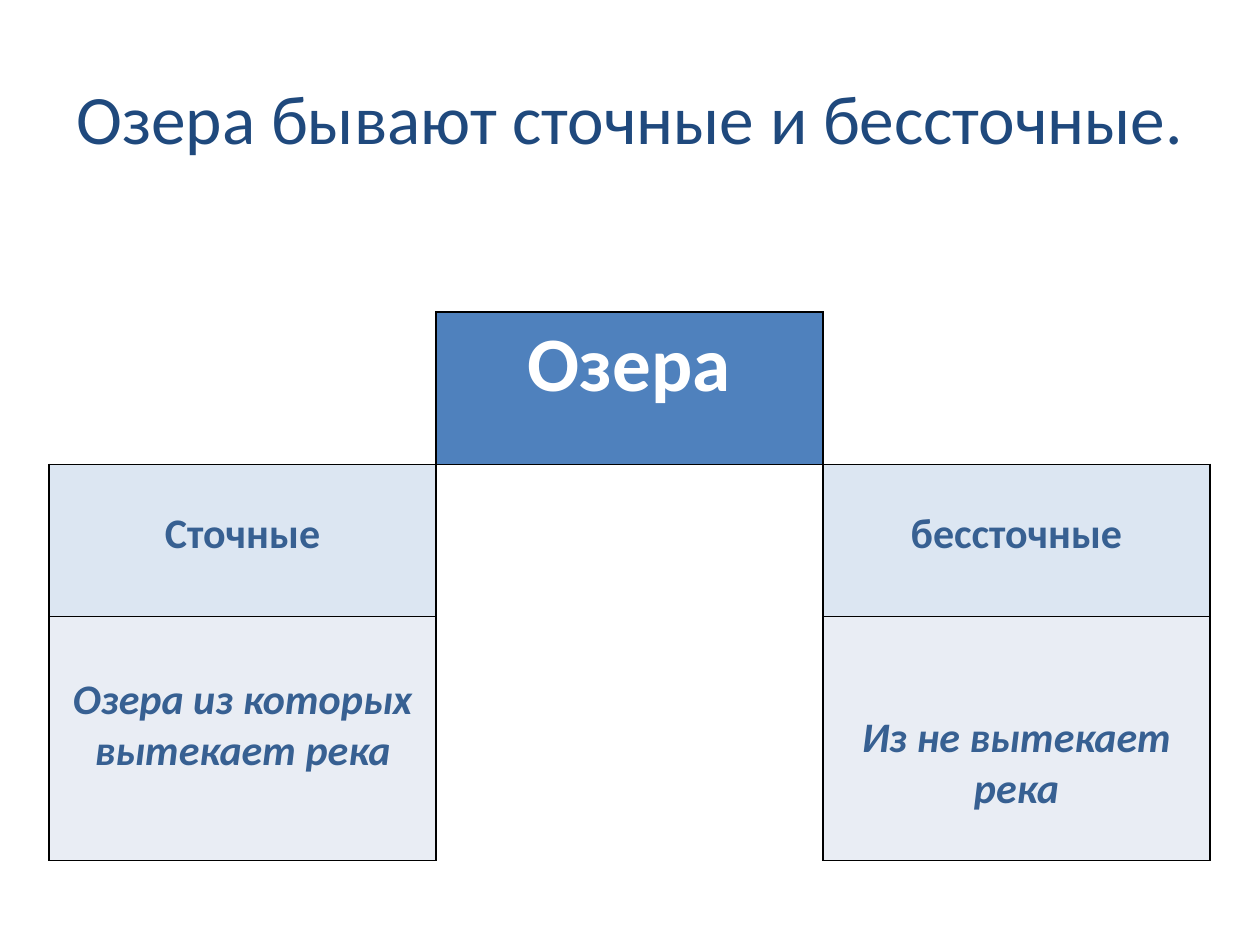
import pptx
import pptx.dml.color
import pptx.enum.text
import pptx.oxml
import pptx.oxml.ns
import pptx.util
from pptx.util import Cm

HEADING = dict(size=44, color="FFFFFF", bold=True)
KIND = dict(size=24, color="376092", bold=True)
MEANING = dict(KIND, italic=True)

# (row, column): text, fill, top margin in cm, text format
CELLS = {
    (0, 1): ("Озера", "4F81BD", 0.13, HEADING),
    (1, 0): ("Сточные", "DCE6F2", 0.9, KIND),
    (1, 2): ("бессточные", "DCE6F2", 0.9, KIND),
    (2, 0): ("Озера из которых вытекает река", "E9EDF4", 1.16, MEANING),
    (2, 2): ("Из не вытекает река", "E9EDF4", 1.94, MEANING),
}
ROW_HEIGHTS = (3.07, 3.07, 4.92)
COLUMN_WIDTH = 7.8
SIDES = {"lnL": (0, -1), "lnR": (0, 1), "lnT": (-1, 0), "lnB": (1, 0)}


def rgb(code):
    return pptx.dml.color.RGBColor.from_string(code)


def write_text(frame, text, size, color, bold=False, italic=False):
    para = frame.paragraphs[0]
    para.alignment = pptx.enum.text.PP_ALIGN.CENTER
    span = para.add_run()
    span.text = text
    span.font.name = "Calibri"
    span.font.size = pptx.util.Pt(size)
    span.font.bold = bold
    span.font.italic = italic
    span.font.color.rgb = rgb(color)


def set_border(cell, side, visible):
    paint = '<a:solidFill><a:srgbClr val="000000"/></a:solidFill>' if visible else "<a:noFill/>"
    line = f'<a:{side} {pptx.oxml.ns.nsdecls("a")} w="12700">{paint}</a:{side}>'
    cell._tc.get_or_add_tcPr().append(pptx.oxml.parse_xml(line))


def add_title(page, text):
    title = page.shapes.title
    title.left, title.top, title.width, title.height = Cm(1.27), Cm(0.76), Cm(22.86), Cm(3.18)
    title.text_frame.vertical_anchor = pptx.enum.text.MSO_ANCHOR.MIDDLE
    write_text(title.text_frame, text, size=39.6, color="1F497D")


def format_cell(cell, row, column):
    """Fill a listed cell; an empty one keeps only the borders it shares."""
    for side, (down, right) in SIDES.items():
        touches = (row, column) in CELLS or (row + down, column + right) in CELLS
        set_border(cell, side, touches)
    if (row, column) not in CELLS:
        cell.fill.background()
        return
    text, fill, margin, style = CELLS[row, column]
    cell.fill.solid()
    cell.fill.fore_color.rgb = rgb(fill)
    cell.margin_top = Cm(margin)
    write_text(cell.text_frame, text, **style)


def add_lake_table(page):
    frame = page.shapes.add_table(
        len(ROW_HEIGHTS), 3, Cm(0.99), Cm(6.29), Cm(3 * COLUMN_WIDTH), Cm(sum(ROW_HEIGHTS)))
    table = frame.table
    table.first_row = False
    table.horz_banding = False
    for column in table.columns:
        column.width = Cm(COLUMN_WIDTH)
    for row, height in enumerate(ROW_HEIGHTS):
        table.rows[row].height = Cm(height)
        for column in range(3):
            format_cell(table.cell(row, column), row, column)


def main():
    deck = pptx.Presentation()
    deck.slide_width, deck.slide_height = Cm(25.4), Cm(19.05)
    page = deck.slides.add_slide(deck.slide_layouts[5])
    add_title(page, "Озера бывают сточные и бессточные.")
    add_lake_table(page)
    deck.save("out.pptx")


if __name__ == "__main__":
    main()
